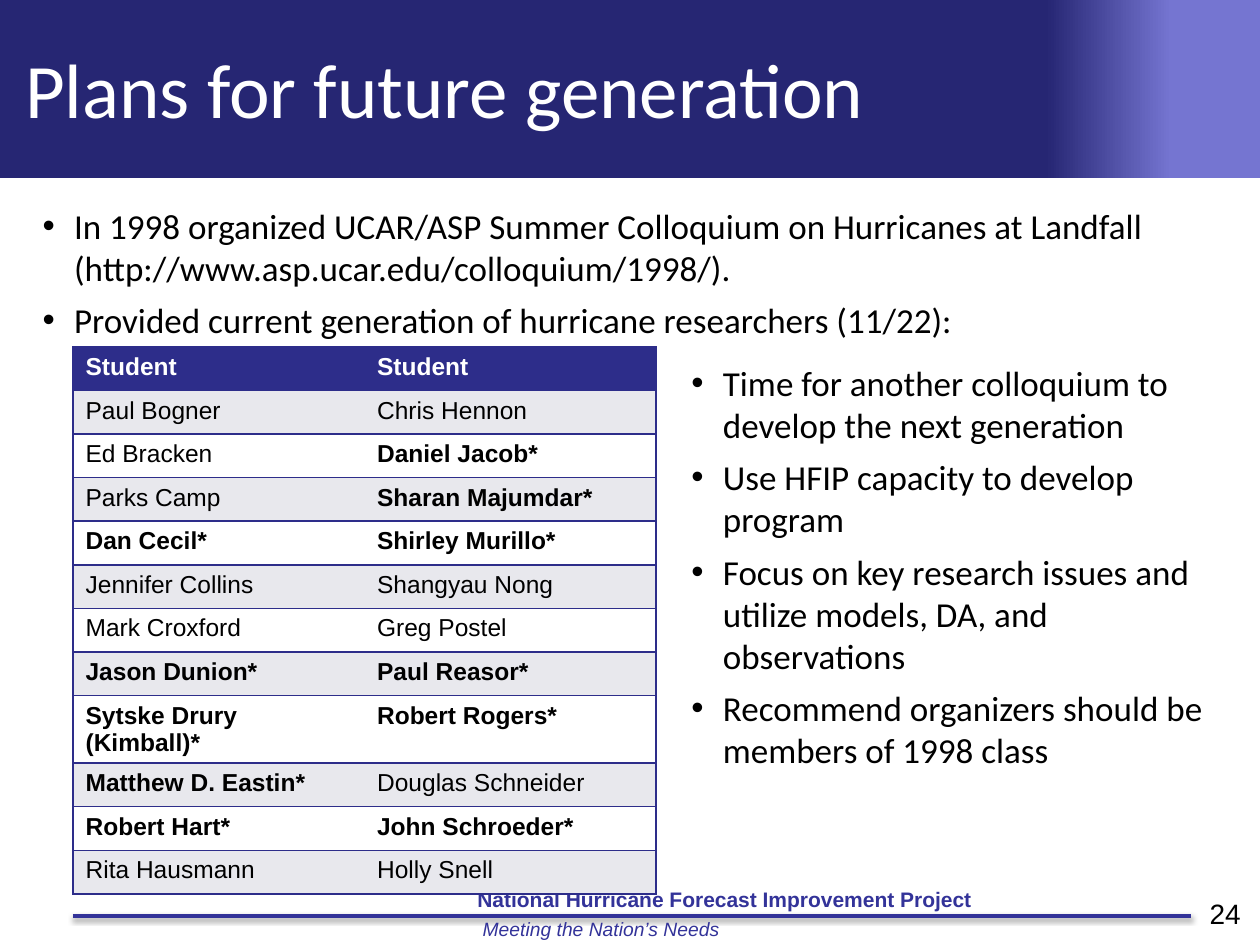
from lxml.etree import SubElement
from pptx import Presentation
from pptx.dml.color import RGBColor
from pptx.enum.shapes import MSO_CONNECTOR, MSO_SHAPE
from pptx.enum.text import MSO_ANCHOR, MSO_AUTO_SIZE, PP_ALIGN
from pptx.oxml import parse_xml
from pptx.oxml.ns import nsdecls, qn
from pptx.util import Emu, Pt

EMU_PER_PX = 914400 / 126


class Theme:
    NAVY = "262673"
    PERIWINKLE = "7575D1"
    INDIGO = "333399"
    TABLE_BLUE = "2D2D8A"
    BAND = "E8E8ED"
    WHITE = "FFFFFF"
    BLACK = "000000"
    TITLE = {"name": "Calibri", "size": Pt(44), "color": WHITE, "bold": False}
    LIST = {"name": "Calibri", "size": Pt(20), "color": BLACK}
    CELL = {"name": "Arial", "size": Pt(14), "color": BLACK, "bold": False}
    PROJECT = {"name": "Arial", "size": Pt(12), "color": INDIGO, "bold": True}
    MOTTO = {"name": "Arial", "size": Pt(11), "color": INDIGO, "italic": True}
    PAGE = {"name": "Arial", "size": Pt(16), "color": BLACK}


INTRODUCTION = [
    "In 1998 organized UCAR/ASP Summer Colloquium on Hurricanes at Landfall "
    "(http://www.asp.ucar.edu/colloquium/1998/).",
    "Provided current generation of hurricane researchers (11/22):",
]
PROPOSALS = [
    "Time for another colloquium to develop the next generation",
    "Use HFIP capacity to develop program",
    "Focus on key research issues and utilize models, DA, and observations",
    "Recommend organizers should be members of 1998 class",
]
STUDENTS = [
    ("Student", "Student"),
    ("Paul Bogner", "Chris Hennon"),
    ("Ed Bracken", "Daniel Jacob*"),
    ("Parks Camp", "Sharan Majumdar*"),
    ("Dan Cecil*", "Shirley Murillo*"),
    ("Jennifer Collins", "Shangyau Nong"),
    ("Mark Croxford", "Greg Postel"),
    ("Jason Dunion*", "Paul Reasor*"),
    ("Sytske Drury (Kimball)*", "Robert Rogers*"),
    ("Matthew D. Eastin*", "Douglas Schneider"),
    ("Robert Hart*", "John Schroeder*"),
    ("Rita Hausmann", "Holly Snell"),
]


def px(*lengths):
    return [Emu(round(length * EMU_PER_PX)) for length in lengths]


def set_attributes(target, values):
    for name, value in values.items():
        setattr(target, name, value)


def add_run(paragraph, text, style):
    run = paragraph.add_run()
    run.text = text
    values = dict(style)
    run.font.color.rgb = RGBColor.from_string(values.pop("color"))
    set_attributes(run.font, values)


def place(shape, box):
    """Move a placeholder to a box and bring it to the front."""
    set_attributes(shape, dict(zip(("left", "top", "width", "height"), px(*box))))
    shape._element.getparent().append(shape._element)


def add_text_box(slide, box):
    frame = slide.shapes.add_textbox(*px(*box)).text_frame
    frame.word_wrap = True
    return frame


def add_bullets(frame, items):
    set_attributes(frame, {"word_wrap": True, "auto_size": MSO_AUTO_SIZE.NONE,
                           "vertical_anchor": MSO_ANCHOR.TOP})
    for index, item in enumerate(items):
        paragraph = frame.add_paragraph() if index else frame.paragraphs[0]
        properties = paragraph._p.get_or_add_pPr()
        properties.set("marL", "228600")
        properties.set("indent", "-228600")
        SubElement(properties, qn("a:buFont")).set("typeface", "Arial")
        SubElement(properties, qn("a:buChar")).set("char", "•")
        paragraph.space_before = Pt(6 if index else 0)
        add_run(paragraph, item, Theme.LIST)


def add_banner(slide):
    banner = slide.shapes.add_shape(MSO_SHAPE.RECTANGLE, *px(0, 0, 1260, 178))
    banner.shadow.inherit = False
    banner.line.fill.background()
    banner.fill.gradient()
    banner.fill.gradient_angle = 0
    colors = ((0.83, Theme.NAVY), (0.93, Theme.PERIWINKLE))
    for stop, (position, color) in zip(banner.fill.gradient_stops, colors):
        stop.position = position
        stop.color.rgb = RGBColor.from_string(color)


def add_footer_line(slide):
    line = slide.shapes.add_connector(MSO_CONNECTOR.STRAIGHT, *px(73, 916, 1191, 916))
    line.line.color.rgb = RGBColor.from_string(Theme.INDIGO)
    line.line.width = Pt(2)
    line._element.spPr.append(parse_xml(
        f'<a:effectLst {nsdecls("a")}><a:outerShdw blurRad="39400" dist="20300" '
        f'dir="5400000" rotWithShape="0"><a:srgbClr val="{Theme.BLACK}">'
        '<a:alpha val="38000"/></a:srgbClr></a:outerShdw></a:effectLst>'))


def add_footer(slide):
    add_footer_line(slide)
    paragraph = add_text_box(slide, (465, 874, 620, 76)).paragraphs[0]
    paragraph.line_spacing = 1.25
    add_run(paragraph, "National Hurricane Forecast Improvement Project", Theme.PROJECT)
    paragraph.add_line_break()
    add_run(paragraph, " Meeting the Nation’s Needs", Theme.MOTTO)
    frame = add_text_box(slide, (1058, 890, 195, 47))
    frame.vertical_anchor = MSO_ANCHOR.MIDDLE
    frame.paragraphs[0].alignment = PP_ALIGN.RIGHT
    add_run(frame.paragraphs[0], "24", Theme.PAGE)


def set_borders(cell, visible_sides):
    properties = cell._tc.get_or_add_tcPr()
    for index, side in enumerate("LRTB"):
        paint = (f'<a:solidFill><a:srgbClr val="{Theme.TABLE_BLUE}"/></a:solidFill>'
                 if side in visible_sides else "<a:noFill/>")
        properties.insert(index, parse_xml(
            f'<a:ln{side} {nsdecls("a")} w="12700">{paint}</a:ln{side}>'))


def add_student_table(slide):
    """Starred names are bold; rows alternate between band and white."""
    box = px(73, 347, 583, 523)
    table = slide.shapes.add_table(len(STUDENTS), 2, *box).table
    table.horz_banding = False
    for row_index, names in enumerate(STUDENTS):
        header = row_index == 0
        band = Theme.BAND if row_index % 2 else Theme.WHITE
        for column_index, name in enumerate(names):
            cell = table.cell(row_index, column_index)
            cell.fill.solid()
            cell.fill.fore_color.rgb = RGBColor.from_string(
                Theme.TABLE_BLUE if header else band)
            set_borders(cell, "RTB" if column_index else "LTB")
            style = Theme.CELL | {"bold": header or name.endswith("*")}
            if header:
                style["color"] = Theme.WHITE
            add_run(cell.text_frame.paragraphs[0], name, style)


def fill_title(title):
    place(title, (0, 0, 1115, 189))
    frame = title.text_frame
    margin, = px(25)
    set_attributes(frame, {"margin_left": margin, "margin_right": margin,
                           "vertical_anchor": MSO_ANCHOR.MIDDLE,
                           "auto_size": MSO_AUTO_SIZE.NONE})
    set_attributes(frame.paragraphs[0], {"alignment": PP_ALIGN.LEFT, "line_spacing": 0.85})
    add_run(frame.paragraphs[0], "Plans for future generation", Theme.TITLE)


def main():
    presentation = Presentation()
    presentation.slide_width, presentation.slide_height = px(1260, 945)
    slide = presentation.slides.add_slide(presentation.slide_layouts[1])
    add_footer(slide)
    add_banner(slide)
    fill_title(slide.shapes.title)
    body = slide.placeholders[1]
    place(body, (30, 198, 1218, 155))
    add_bullets(body.text_frame, INTRODUCTION)
    add_student_table(slide)
    add_bullets(add_text_box(slide, (679, 355, 536, 426)), PROPOSALS)
    presentation.save("out.pptx")


if __name__ == "__main__":
    main()
